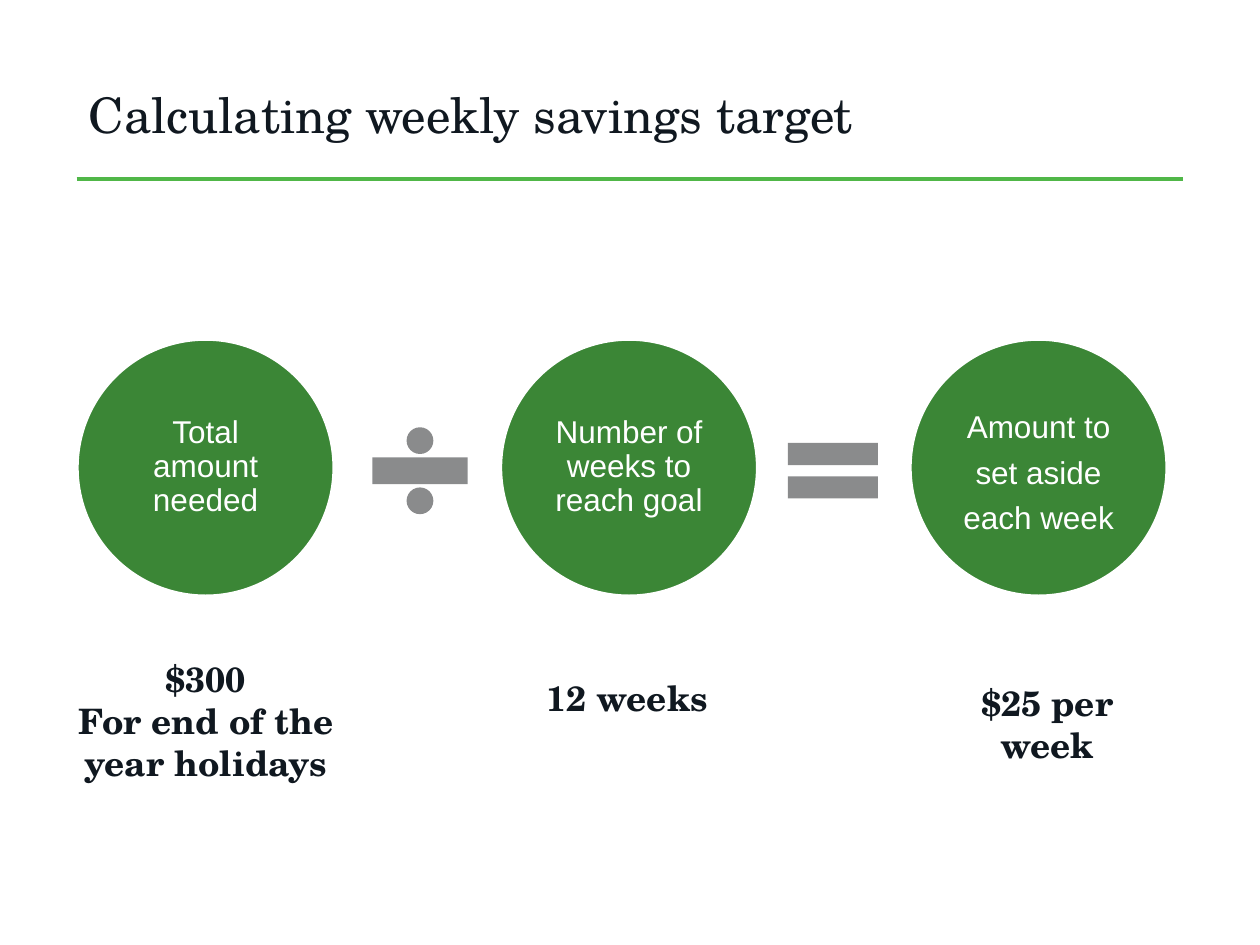
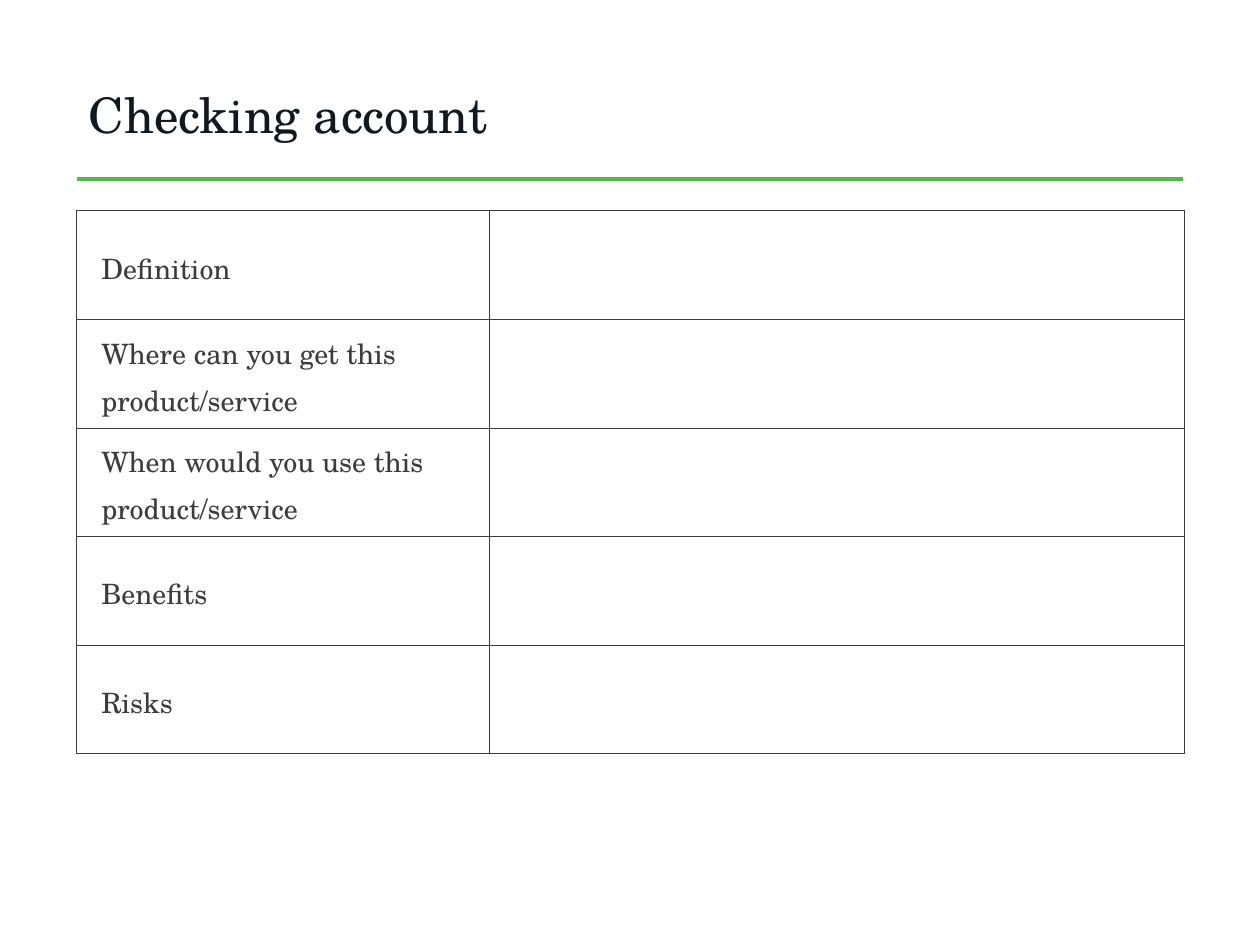
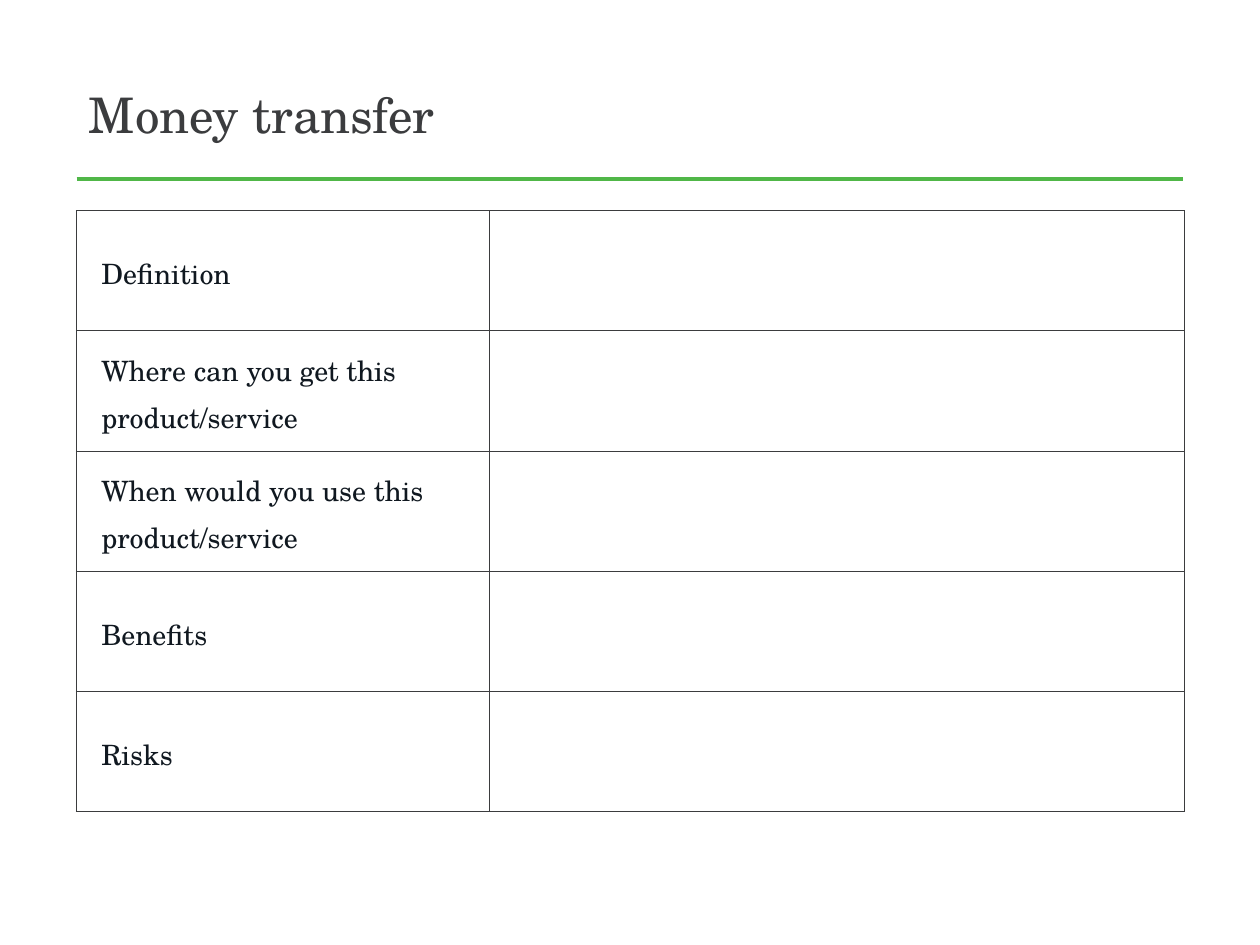
from pptx import Presentation
from pptx.dml.color import RGBColor
from pptx.enum.shapes import MSO_CONNECTOR, MSO_SHAPE
from pptx.enum.text import MSO_ANCHOR, PP_ALIGN
from pptx.oxml.ns import qn
from pptx.util import Pt
from lxml.etree import SubElement

INK = RGBColor(0x10, 0x18, 0x20)
CHARCOAL = RGBColor(0x3B, 0x3C, 0x3E)
GRAY = RGBColor(0x8A, 0x8B, 0x8C)
WHITE = RGBColor(0xFF, 0xFF, 0xFF)
GREEN = RGBColor(0x3B, 0x86, 0x36)
RULE_GREEN = RGBColor(0x50, 0xB7, 0x48)

SERIF = "TeX Gyre Schola"
SANS = "Arial"

LEFT, RIGHT = 43.75, 676.25
CIRCLE_TOP, CIRCLE_SIZE = 193.75, 147
COLUMN_WIDTHS = (236, 397)
QUESTIONS = (
    "Definition",
    "Where can you get this product/service",
    "When would you use this product/service",
    "Benefits",
    "Risks",
)


def style_paragraph(paragraph, text, name, size, color, bold=False,
                    align=PP_ALIGN.LEFT, spacing=None):
    paragraph.text = text
    paragraph.alignment = align
    paragraph.line_spacing = spacing
    font = paragraph.font
    font.name, font.size, font.bold = name, Pt(size), bold
    font.color.rgb = color


def add_text_box(page, left, top, width, height):
    box = page.shapes.add_textbox(Pt(left), Pt(top), Pt(width), Pt(height))
    box.text_frame.word_wrap = True
    return box.text_frame


def add_page(deck, title, color=INK):
    """Add a blank slide with the shared title and green rule."""
    page = deck.slides.add_slide(deck.slide_layouts[6])
    rule = page.shapes.add_connector(
        MSO_CONNECTOR.STRAIGHT, Pt(LEFT), Pt(102.25), Pt(RIGHT), Pt(102.25))
    rule.line.color.rgb = RULE_GREEN
    rule.line.width = Pt(2)
    SubElement(rule._element.spPr, qn("a:effectLst"))
    frame = add_text_box(page, LEFT, 36, 633, 58.5)
    frame.vertical_anchor = MSO_ANCHOR.MIDDLE
    style_paragraph(frame.paragraphs[0], title, SERIF, 28, color)
    return page


def add_solid_shape(page, kind, left, top, width, height, color):
    shape = page.shapes.add_shape(kind, Pt(left), Pt(top), Pt(width), Pt(height))
    shape.shadow.inherit = False
    shape.fill.solid()
    shape.fill.fore_color.rgb = color
    shape.line.fill.background()
    return shape


def add_circle(page, left, text, spacing):
    circle = add_solid_shape(page, MSO_SHAPE.OVAL, left, CIRCLE_TOP,
                             CIRCLE_SIZE, CIRCLE_SIZE, GREEN)
    circle.line.color.rgb = WHITE
    circle.line.width = Pt(2)
    frame = circle.text_frame
    frame.word_wrap = True
    frame.vertical_anchor = MSO_ANCHOR.MIDDLE
    frame.margin_left = frame.margin_right = Pt(2)
    frame.margin_top = frame.margin_bottom = Pt(2)
    style_paragraph(frame.paragraphs[0], text, SANS, 18, WHITE,
                    align=PP_ALIGN.CENTER, spacing=spacing)


def add_example(page, left, top, width, height, lines, align=PP_ALIGN.CENTER):
    frame = add_text_box(page, left, top, width, height)
    for index, line in enumerate(lines):
        paragraph = frame.add_paragraph() if index else frame.paragraphs[0]
        style_paragraph(paragraph, line, SERIF, 20, INK, bold=True, align=align)


def outline_cell(cell):
    properties = cell._tc.get_or_add_tcPr()
    for side in ("a:lnL", "a:lnR", "a:lnT", "a:lnB"):
        border = SubElement(properties, qn(side), w=str(Pt(0.25)))
        fill = SubElement(border, qn("a:solidFill"))
        SubElement(fill, qn("a:srgbClr"), val=str(CHARCOAL))
    cell.fill.background()


def add_question_table(page, row_height, color):
    """Add the worksheet grid: questions on the left, blank answers on the right."""
    table = page.shapes.add_table(
        len(QUESTIONS), len(COLUMN_WIDTHS), Pt(43.5), Pt(120.25),
        Pt(sum(COLUMN_WIDTHS)), Pt(row_height * len(QUESTIONS))).table
    table.first_row = table.horz_banding = False
    for column, width in zip(table.columns, COLUMN_WIDTHS):
        column.width = Pt(width)
    for row, question in zip(table.rows, QUESTIONS):
        row.height = Pt(row_height)
        for cell in row.cells:
            outline_cell(cell)
        label = row.cells[0]
        label.vertical_anchor = MSO_ANCHOR.MIDDLE
        label.margin_left = Pt(14.4)
        style_paragraph(label.text_frame.paragraphs[0], question, SERIF, 16,
                        color, spacing=1.15)


def add_savings_page(deck):
    page = add_page(deck, "Calculating weekly savings target")
    add_circle(page, 44, "Total amount needed", 0.9)
    add_circle(page, 286, "Number of weeks to reach goal", 0.9)
    add_circle(page, 520, "Amount to set aside each week", 1.2)
    add_solid_shape(page, MSO_SHAPE.MATH_DIVIDE, 203, 236.5, 74, 65, GRAY)
    add_solid_shape(page, MSO_SHAPE.MATH_EQUAL, 441, 242, 70, 54, GRAY)
    add_example(page, 32.4, 372, 170.6, 80,
                ("$300", "For end of the year holidays"))
    add_example(page, 305, 383, 117, 31.5, ("12 weeks",), PP_ALIGN.LEFT)
    add_example(page, 540, 386, 117, 55.5, ("$25 per week",))


def main():
    deck = Presentation()
    deck.slide_width, deck.slide_height = Pt(720), Pt(540)
    add_savings_page(deck)
    add_question_table(add_page(deck, "Checking account"), 62.1, CHARCOAL)
    add_question_table(add_page(deck, "Money transfer", CHARCOAL), 68.7, INK)
    deck.save("out.pptx")


if __name__ == "__main__":
    main()
